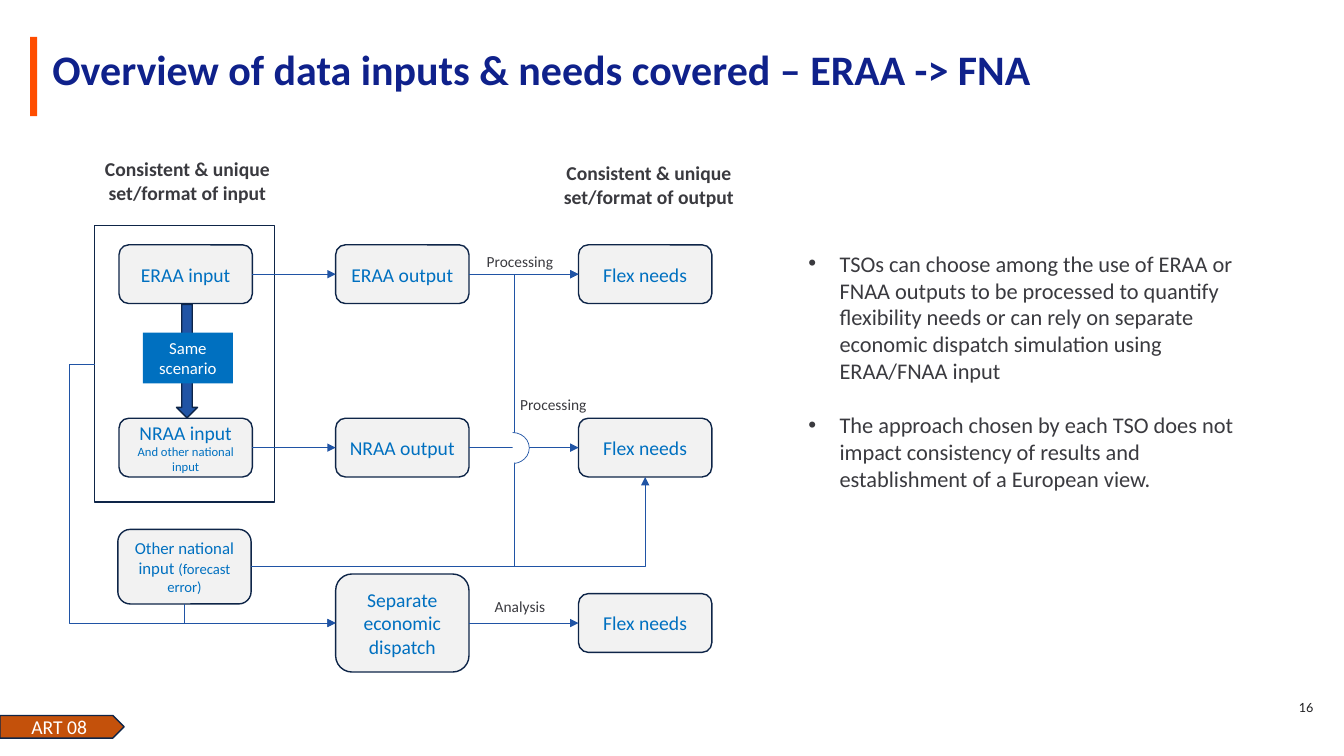
from dataclasses import dataclass
from lxml.etree import SubElement
from pptx import Presentation
from pptx.dml.color import RGBColor
from pptx.enum.shapes import MSO_CONNECTOR, MSO_SHAPE
from pptx.enum.text import MSO_ANCHOR, PP_ALIGN
from pptx.oxml.ns import qn
from pptx.util import Cm, Pt


@dataclass(frozen=True)
class Theme:
    """Colours, font and type sizes of the slide."""
    font: str = "Calibri"
    number_font: str = "Lato"
    title: str = "0F218B"
    accent: str = "FF4D00"
    edge: str = "0E2548"
    link: str = "2054A5"
    blue: str = "0070C0"
    pale: str = "F2F2F2"
    text: str = "3A3A3F"
    ink: str = "1D1D20"
    white: str = "FFFFFF"
    tag: str = "C4510B"
    head: int = 30
    body: int = 16
    label: int = 14
    note: int = 12
    small: int = 11
    minor: float = 10.5
    tiny: int = 9


TOP, LEFT, BOTTOM, RIGHT = range(4)


class Board:
    """Draws styled elements on the current slide."""

    def __init__(self, slide, theme):
        self.shapes = slide.shapes
        self.theme = theme

    def fill_text(self, frame, lines, hue, anchor=MSO_ANCHOR.MIDDLE,
                  align=PP_ALIGN.CENTER, bold=False, font=None):
        """Fill a frame with lines, each a list of (text, size) runs."""
        frame.word_wrap = True
        frame.vertical_anchor = anchor
        for i, runs in enumerate(lines):
            para = frame.add_paragraph() if i else frame.paragraphs[0]
            para.alignment = align
            for text, size in runs:
                run = para.add_run()
                run.text = text
                run.font.name = font or self.theme.font
                run.font.size = Pt(size)
                run.font.bold = bold
                run.font.color.rgb = RGBColor.from_string(hue)

    def text(self, x, y, w, h, lines, hue, **style):
        """Add a text box."""
        frame = self.shapes.add_textbox(Cm(x), Cm(y), Cm(w), Cm(h)).text_frame
        self.fill_text(frame, lines, hue, **style)
        return frame

    def shape(self, kind, x, y, w, h, fill=None, edge=None, width=1):
        """Add a preset shape."""
        shape = self.shapes.add_shape(kind, Cm(x), Cm(y), Cm(w), Cm(h))
        shape.shadow.inherit = False
        for part, hue in ((shape.fill, fill), (shape.line.fill, edge)):
            if hue:
                part.solid()
                part.fore_color.rgb = RGBColor.from_string(hue)
            else:
                part.background()
        if edge:
            shape.line.width = Pt(width)
        return shape

    def box(self, x, mid, lines, h=1.48):
        """Add a rounded box centred on a row."""
        look = self.theme
        shape = self.shape(MSO_SHAPE.ROUNDED_RECTANGLE, x, mid - h / 2, 3.36, h,
                           look.pale, look.edge)
        self.fill_text(shape.text_frame, lines, look.blue)
        return shape

    def side(self, shape, site):
        """Return the middle of one side of a shape."""
        dx, dy = ((1, 0), (0, 1), (1, 2), (2, 1))[site]
        return shape.left + shape.width * dx // 2, shape.top + shape.height * dy // 2

    def line(self, kind, start, end, tip="tailEnd"):
        """Add a thin connector with one arrowhead."""
        link = self.shapes.add_connector(kind, *start, *end)
        link.line.color.rgb = RGBColor.from_string(self.theme.link)
        link.line.width = Pt(0.5)
        props = link.element.spPr
        SubElement(props.find(qn("a:ln")), qn("a:" + tip), type="triangle")
        SubElement(props, qn("a:effectLst"))
        return link

    def arrow(self, one, two):
        """Join two boxes from right side to left side."""
        link = self.line(MSO_CONNECTOR.STRAIGHT, self.side(one, RIGHT), self.side(two, LEFT))
        link.begin_connect(one, RIGHT)
        link.end_connect(two, LEFT)

    def elbow(self, start, end, bend=None, tip="tailEnd"):
        """Add a bent arrow with one corner, or two at a given bend."""
        link = self.line(MSO_CONNECTOR.ELBOW, start, end, tip)
        geom = link.element.spPr.find(qn("a:prstGeom"))
        if bend is None:
            geom.set("prst", "bentConnector2")
        else:
            SubElement(geom.find(qn("a:avLst")), qn("a:gd"), name="adj1",
                       fmla=f"val {round(bend * 100000)}")

    def bullets(self, x, y, w, h, items):
        """Add a bulleted list with a line's gap between items."""
        look = self.theme
        frame = self.text(x, y, w, h, [[(item, look.body)] for item in items], look.text,
                          anchor=MSO_ANCHOR.TOP, align=PP_ALIGN.LEFT)
        for i, para in enumerate(frame.paragraphs):
            if i:
                para.space_before = Pt(19.5)
            props = para._p.get_or_add_pPr()
            props.set("marL", str(Cm(0.79)))
            props.set("indent", str(Cm(-0.79)))
            SubElement(props, qn("a:buFont"), typeface="Arial")
            SubElement(props, qn("a:buChar"), char="•")


def main():
    """Build the slide and save it."""
    deck = Presentation()
    deck.slide_width, deck.slide_height = Cm(33.87), Cm(19.05)
    look = Theme()
    board = Board(deck.slides.add_slide(deck.slide_layouts[6]), look)

    board.text(17.15, 17.32, 16.2, 1.02, [[("16", look.tiny)]], look.ink,
               align=PP_ALIGN.RIGHT, font=look.number_font)
    board.shape(MSO_SHAPE.RECTANGLE, 0.76, 0.93, 0.18, 2, look.accent)
    head = board.text(1.07, 1.3, 32.28, 0.99,
                      [[("Overview of data inputs & needs covered – ERAA -> FNA", look.head)]],
                      look.title, align=PP_ALIGN.LEFT, bold=True)
    head.paragraphs[0].line_spacing = Pt(32)

    board.shape(MSO_SHAPE.DOWN_ARROW, 4.45, 7.67, 0.53, 2.86, look.link, look.edge)
    frame = board.shape(MSO_SHAPE.RECTANGLE, 2.39, 5.69, 4.53, 6.96, edge=look.edge)

    rows = 6.91, 11.28, 15.7
    first, second, third = 3, 8.46, 14.58
    ins = [board.box(first, rows[0], [[("ERAA input", look.label)]]),
           board.box(first, rows[1], [[("NRAA input", look.label)],
                                      [("And other national input", look.tiny)]])]
    outs = [board.box(second, mid, [[(name, look.label)]], h) for mid, name, h in zip(
        rows, ("ERAA output", "NRAA output", "Separate economic dispatch"), (1.48, 1.48, 2.47))]
    needs = [board.box(third, mid, [[("Flex needs", look.label)]]) for mid in rows]
    other = board.box(2.97, 14.28, [[("Other national input ", look.note),
                                     ("(forecast error)", look.minor)]], 1.88)
    same = board.shape(MSO_SHAPE.RECTANGLE, 3.6, 8.38, 2.27, 1.28, look.blue)
    board.fill_text(same.text_frame, [[("Same scenario", look.note)]], look.white,
                    MSO_ANCHOR.TOP)

    for one, two in [*zip(ins, outs), *zip(outs, needs)]:
        board.arrow(one, two)
    start, goal = board.side(other, RIGHT), board.side(outs[2], LEFT)
    board.elbow(start, board.side(needs[1], BOTTOM))
    board.elbow(start, board.side(needs[0], LEFT), 0.805)
    board.elbow(board.side(frame, LEFT), goal, -0.105)
    board.elbow(goal, board.side(other, BOTTOM), tip="headEnd")
    hop = board.shape(MSO_SHAPE.ARC, 12.5, 10.9, 0.84, 0.78, look.white, look.link, 0.5)
    hop.adjustments[0], hop.adjustments[1] = 162, 49.97

    for x, y, name in ((2.11, 3.84, "input"), (13.74, 3.94, "output")):
        board.text(x, y, 5.23, 1.45, [[("Consistent & unique set/format of " + name, look.label)]],
                   look.text, anchor=MSO_ANCHOR.TOP, bold=True)
    for x, y, name in ((10.49, 6.22, "Processing"), (11.33, 9.84, "Processing"),
                       (10.49, 14.92, "Analysis")):
        board.text(x, y, 5.23, 0.73, [[(name, look.small)]], look.text, anchor=MSO_ANCHOR.TOP)

    board.bullets(20.12, 6.17, 11.51, 6.4, (
        "TSOs can choose among the use of ERAA or FNAA outputs to be processed to quantify "
        "flexibility needs or can rely on separate economic dispatch simulation using "
        "ERAA/FNAA input",
        "The approach chosen by each TSO does not impact consistency of results and "
        "establishment of a European view."))
    tag = board.shape(MSO_SHAPE.PENTAGON, 0, 18.03, 3.13, 0.57, look.tag, look.edge)
    board.fill_text(tag.text_frame, [[("ART 08", look.label)]], look.white)
    deck.save("out.pptx")


if __name__ == "__main__":
    main()
